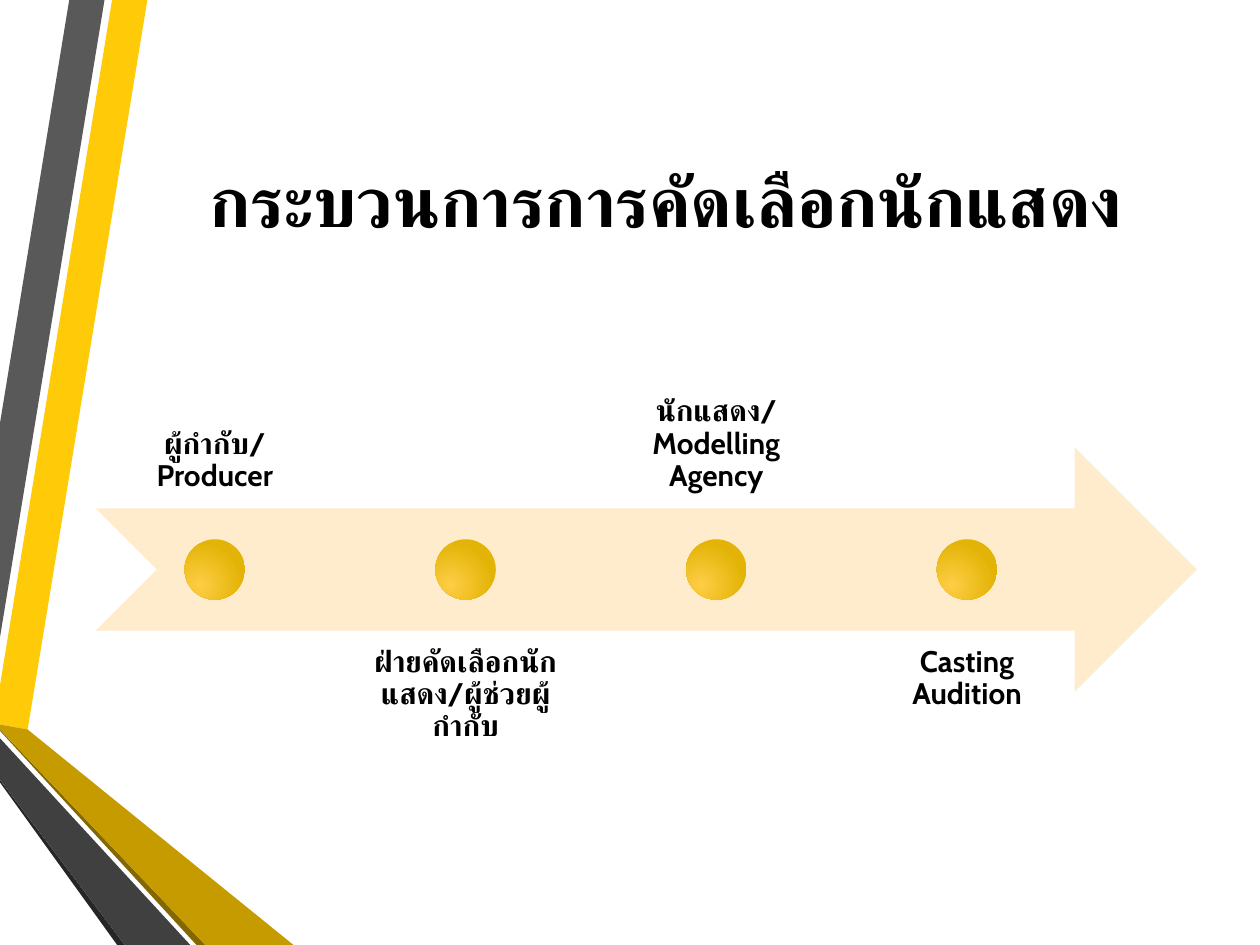
from lxml.etree import SubElement
from pptx import Presentation
from pptx.dml.color import RGBColor
from pptx.enum.shapes import MSO_SHAPE
from pptx.enum.text import MSO_ANCHOR, MSO_AUTO_SIZE, PP_ALIGN
from pptx.oxml.ns import qn
from pptx.util import Inches, Pt

RIBBONS = [
    ("FFCA08", [(0, 5.44), (0, 5.75), (0.22, 5.79), (1.17, 0), (0.89, 0)]),
    ("595959", [(0.83, 0), (0.55, 0), (0, 3.36), (0, 5.06)]),
    ("262626", [(0, 6.19), (0, 6.21), (0.93, 7.5), (0.99, 7.5)]),
    ("846700", [(0, 5.79), (0, 5.8), (1.56, 7.5), (1.63, 7.5)]),
    ("C59B00", [(0, 5.79), (1.63, 7.5), (2.33, 7.5), (0.22, 5.79), (0, 5.75)]),
    ("404040", [(0, 6.19), (0.99, 7.5), (1.51, 7.5), (0, 5.86)]),
]
STEPS = [
    "ผู้กำกับ/Producer",
    "ฝ่ายคัดเลือกนักแสดง/ผู้ช่วยผู้กำกับ",
    "นักแสดง/Modelling Agency",
    "Casting Audition",
]
TIMELINE_LEFT, STEP_PITCH, STEP_WIDTH, ROW_HEIGHT = 0.76, 1.99, 1.89, 1.94
UPPER_TOP, ARROW_TOP, LOWER_TOP = 2.1, 3.55, 5
DOT_SIZE = 0.48


def rgb(color):
    """Turn a hex string into a colour."""
    return RGBColor.from_string(color)


def write(frame, text, font="Cabin", size=17, color="000000",
          anchor=MSO_ANCHOR.MIDDLE, spacing=1.0, inset=None):
    """Put one centred bold paragraph into a text frame."""
    frame.word_wrap = True
    frame.auto_size = MSO_AUTO_SIZE.NONE
    frame.vertical_anchor = anchor
    if inset is not None:
        frame.margin_left = frame.margin_right = Inches(inset)
        frame.margin_top = frame.margin_bottom = Inches(inset)
    paragraph = frame.paragraphs[0]
    paragraph.alignment = PP_ALIGN.CENTER
    paragraph.line_spacing = spacing
    run = paragraph.add_run()
    run.text = text
    run.font.name = font
    run.font.size = Pt(size)
    run.font.bold = True
    run.font.color.rgb = rgb(color)


def paint(shape, color):
    """Give a shape a plain fill without line or shadow."""
    shape.shadow.inherit = False
    shape.line.fill.background()
    shape.fill.solid()
    shape.fill.fore_color.rgb = rgb(color)


def add_ribbon(slide, color, corners):
    """Draw one closed piece of the folded ribbon."""
    start, *others = [(Inches(x), Inches(y)) for x, y in corners]
    outline = slide.shapes.build_freeform(*start)
    outline.add_line_segments(others, close=True)
    paint(outline.convert_to_shape(), color)


def add_title(slide, text):
    """Place and fill the title."""
    title = slide.shapes.title
    title.left, title.top = Inches(1.07), Inches(0.5)
    title.width, title.height = Inches(8.43), Inches(2.17)
    write(title.text_frame, text, font="Calibri", size=40)


def add_arrow(slide):
    """Draw the broad timeline arrow."""
    arrow = slide.shapes.add_shape(
        MSO_SHAPE.NOTCHED_RIGHT_ARROW, Inches(TIMELINE_LEFT),
        Inches(ARROW_TOP), Inches(8.74), Inches(ROW_HEIGHT))
    paint(arrow, "FFECCC")


def add_dot(slide, left, top):
    """Draw a timeline dot with a radial gradient."""
    dot = slide.shapes.add_shape(
        MSO_SHAPE.OVAL, Inches(left), Inches(top),
        Inches(DOT_SIZE), Inches(DOT_SIZE))
    dot.shadow.inherit = False
    dot.line.fill.background()
    dot.fill.gradient()
    stops = dot.fill.gradient_stops
    for stop, position, color in zip(stops, (0, 1), ("FFCE46", "E3B407")):
        stop.position = position
        stop.color.rgb = rgb(color)
    gradient = dot.element.spPr.find(qn("a:gradFill"))
    gradient.remove(gradient.find(qn("a:lin")))
    circle = SubElement(gradient, qn("a:path"), path="circle")
    SubElement(circle, qn("a:fillToRect"),
               l="50000", t="100000", r="100000", b="50000")


def add_step(slide, index, text):
    """Add a step's label, above or below the arrow in turn, and its dot."""
    left = TIMELINE_LEFT + index * STEP_PITCH
    above = index % 2 == 0
    label = slide.shapes.add_textbox(
        Inches(left), Inches(UPPER_TOP if above else LOWER_TOP),
        Inches(STEP_WIDTH), Inches(ROW_HEIGHT))
    write(label.text_frame, text, spacing=0.9, inset=0.13,
          anchor=MSO_ANCHOR.BOTTOM if above else MSO_ANCHOR.TOP)
    add_dot(slide, left + (STEP_WIDTH - DOT_SIZE) / 2,
            ARROW_TOP + (ROW_HEIGHT - DOT_SIZE) / 2)


def main():
    """Build the casting process slide."""
    presentation = Presentation()
    presentation.slide_width = Inches(10)
    presentation.slide_height = Inches(7.5)
    slide = presentation.slides.add_slide(presentation.slide_layouts[5])
    for color, corners in RIBBONS:
        add_ribbon(slide, color, corners)
    add_title(slide, "กระบวนการการคัดเลือกนักแสดง")
    add_arrow(slide)
    for index, text in enumerate(STEPS):
        add_step(slide, index, text)
    presentation.save("out.pptx")


if __name__ == "__main__":
    main()
